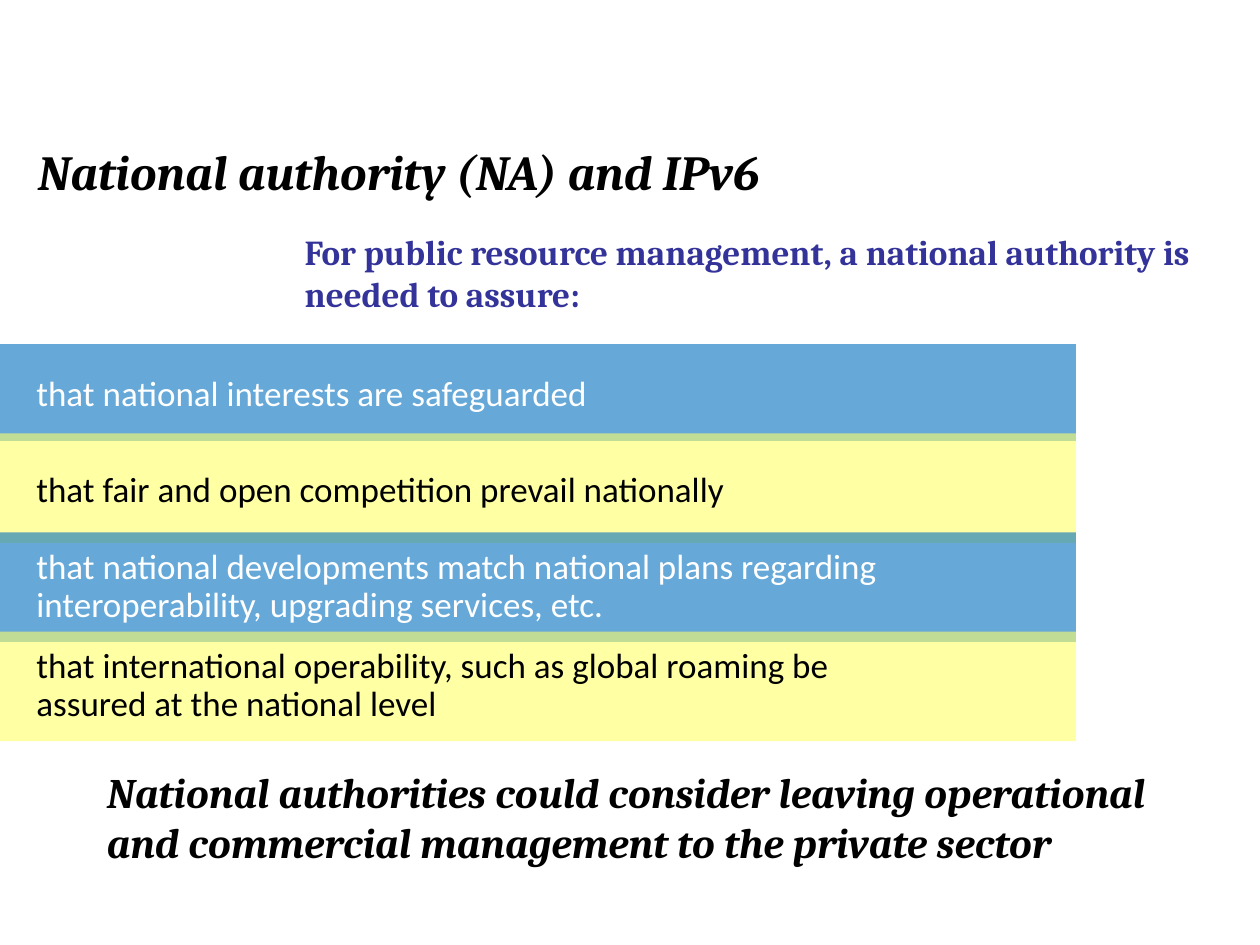
from lxml import etree
from pptx import Presentation
from pptx.dml.color import RGBColor
from pptx.enum.shapes import MSO_SHAPE
from pptx.enum.text import MSO_ANCHOR, MSO_AUTO_SIZE, PP_ALIGN
from pptx.oxml.ns import qn
from pptx.util import Pt

RECTANGLE = MSO_SHAPE.RECTANGLE
TOP, MIDDLE = MSO_ANCHOR.TOP, MSO_ANCHOR.MIDDLE
LEFT = PP_ALIGN.LEFT
NO_AUTOFIT = MSO_AUTO_SIZE.NONE

TITLE = "National authority (NA) and IPv6"
INTRO = "For public resource management, a national authority is needed to assure:"
ASSURANCES = [  # text, line spacing
    ("that national interests are safeguarded", 1.0),
    ("that fair and open competition prevail nationally", 1.0),
    ("that national developments match national plans regarding\n"
     "interoperability, upgrading services, etc.", 0.9),
    ("that international operability, such as global roaming be\v"
     "assured at the national level", 0.9),
]
CONCLUSION = ("National authorities could consider leaving operational\n"
              "and commercial management to the private sector")

THEME = {
    "heading_font": "Cambria", "body_font": "Calibri",
    "title_size": 28, "conclusion_size": 24, "body_size": 20,
    "text": "000000", "intro": "333399",
    "bands": [("0070C0", "FFFFFF"), ("FFFF66", "000000")],  # fill, text
    "band_opacity": 60,
}

BAND_WIDTH, BAND_INDENT = 614.9, 20.8
FIRST_TOP, FIRST_HEIGHT = 196.6, 55.4
SECOND_TOP, BAND_HEIGHT, BAND_PITCH = 247.7, 62.6, 56.6


def place(shape, left, top, width, height):
    shape.left, shape.top = Pt(left), Pt(top)
    shape.width, shape.height = Pt(width), Pt(height)


def write(shape, text, font, size, color, bold=False, italic=False,
          spacing=1.0, anchor=TOP, wrap=True):
    frame = shape.text_frame
    frame.text = text
    frame.word_wrap = wrap
    frame.auto_size = NO_AUTOFIT
    frame.vertical_anchor = anchor
    for paragraph in frame.paragraphs:
        paragraph.alignment = LEFT
        paragraph.line_spacing = spacing
        for run in paragraph.runs:
            run.font.name = font
            run.font.size = Pt(size)
            run.font.bold, run.font.italic = bold, italic
            run.font.color.rgb = RGBColor.from_string(color)


def fill_translucent(shape, color, opacity):
    shape.fill.solid()
    shape.fill.fore_color.rgb = RGBColor.from_string(color)
    color_element = shape.fill._xPr.find(".//" + qn("a:srgbClr"))
    alpha = etree.SubElement(color_element, qn("a:alpha"))
    alpha.set("val", str(opacity * 1000))


def add_band(slide, index, text, spacing):
    if index == 0:
        top, height = FIRST_TOP, FIRST_HEIGHT
    else:
        top, height = SECOND_TOP + (index - 1) * BAND_PITCH, BAND_HEIGHT
    fill, text_color = THEME["bands"][index % 2]
    band = slide.shapes.add_shape(RECTANGLE, 0, Pt(top), Pt(BAND_WIDTH), Pt(height))
    band.shadow.inherit = False
    band.line.fill.background()
    fill_translucent(band, fill, THEME["band_opacity"])
    write(band, text, THEME["body_font"], THEME["body_size"], text_color,
          spacing=spacing, anchor=MIDDLE)
    band.text_frame.margin_left = Pt(BAND_INDENT)


def main():
    presentation = Presentation()
    presentation.slide_width, presentation.slide_height = Pt(720), Pt(540)
    slide = presentation.slides.add_slide(presentation.slide_layouts[5])
    heading = THEME["heading_font"]

    title = slide.shapes.title
    place(title, 14.4, 77, 668.9, 41)
    write(title, TITLE, heading, THEME["title_size"], THEME["text"],
          bold=True, italic=True)

    intro = slide.shapes.add_textbox(Pt(167), Pt(128.2), Pt(553), Pt(55.4))
    write(intro, INTRO, heading, THEME["body_size"], THEME["intro"], bold=True)

    for index, (text, spacing) in enumerate(ASSURANCES):
        add_band(slide, index, text, spacing)

    conclusion = slide.shapes.add_textbox(Pt(54), Pt(434.2), Pt(617), Pt(64.8))
    write(conclusion, CONCLUSION, heading, THEME["conclusion_size"], THEME["text"],
          bold=True, italic=True, wrap=False)

    presentation.save("out.pptx")


if __name__ == "__main__":
    main()
